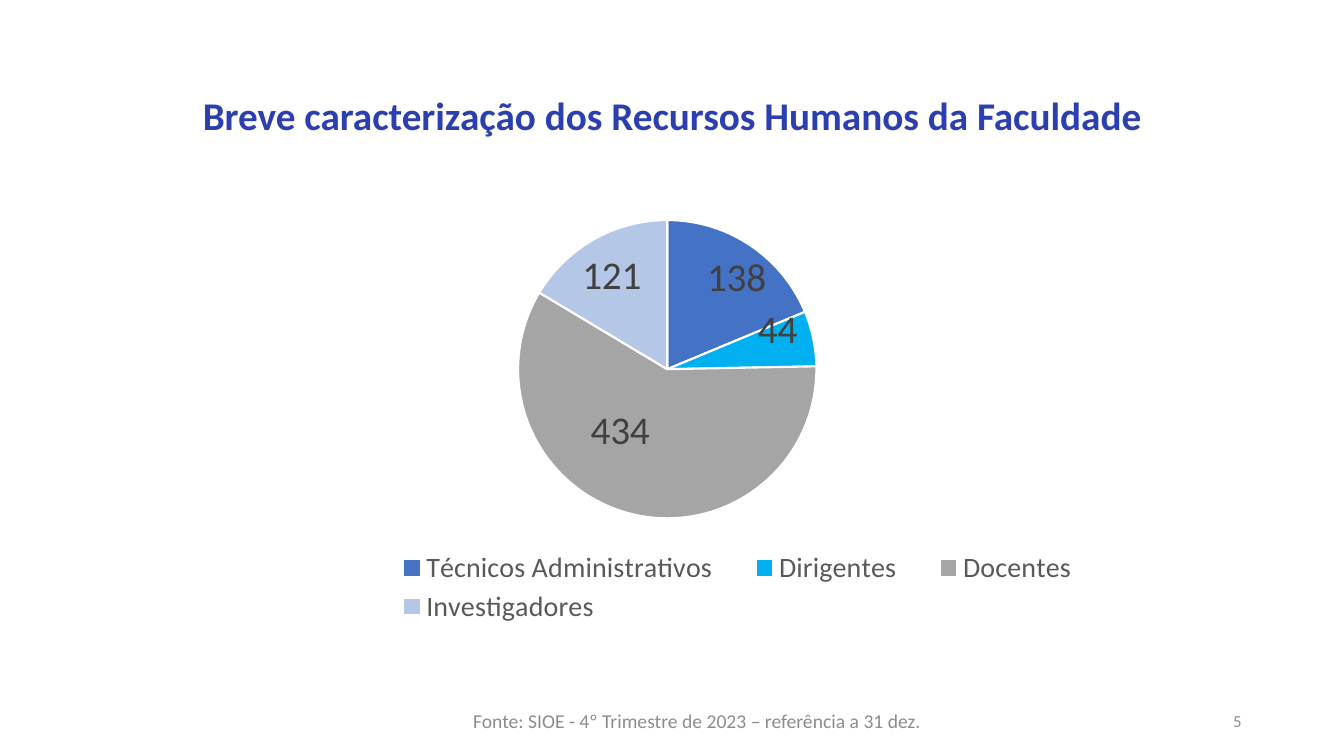
import pptx
import pptx.chart.data
import pptx.dml.color
import pptx.enum.chart
import pptx.enum.text
import pptx.oxml
import pptx.oxml.ns
import pptx.util
from dataclasses import dataclass

Pt = pptx.util.Pt
ALIGN = pptx.enum.text.PP_ALIGN
ANCHOR = pptx.enum.text.MSO_ANCHOR


@dataclass(frozen=True)
class Theme:
    font: str = "Calibri"
    title: str = "2C3FB1"
    foot: str = "8C8C8C"
    legend: str = "595959"
    label: str = "404040"
    edge: str = "FFFFFF"
    big: int = 28
    mid: int = 20
    note: int = 14
    small: int = 12


THEME = Theme()

# name, value, colour, shift of the label from the middle of its slice
STAFF = [
    ("Técnicos Administrativos", 138, "4472C4", (0.03, -0.06)),
    ("Dirigentes", 44, "00B0F0", (0.04, -0.05)),
    ("Docentes", 434, "A5A5A5", (-0.03, -0.02)),
    ("Investigadores", 121, "B4C7E7", (-0.02, -0.06)),
]


def style(font, size, color, bold=False):
    font.name = THEME.font
    font.size = Pt(size)
    font.bold = bold
    font.color.rgb = pptx.dml.color.RGBColor.from_string(color)


def paint(fill, color):
    fill.solid()
    fill.fore_color.rgb = pptx.dml.color.RGBColor.from_string(color)


def place(shape, box):
    shape.left, shape.top, shape.width, shape.height = map(Pt, box)


def write(shape, text, *, size, color, bold=False, align=ALIGN.CENTER,
          anchor=ANCHOR.MIDDLE, top=3.6, space=1.0):
    frame = shape.text_frame
    frame.word_wrap = True
    frame.auto_size = pptx.enum.text.MSO_AUTO_SIZE.NONE
    frame.vertical_anchor = anchor
    frame.margin_top = Pt(top)
    par = frame.paragraphs[0]
    par.alignment = align
    par.line_spacing = space
    run = par.add_run()
    run.text = text
    style(run.font, size, color, bold)


def layout(**parts):
    """Make a manual chart layout from fractions of the chart's size."""
    tags = "".join(f'<c:{tag} val="{val}"/>' for tag, val in parts.items())
    space = pptx.oxml.ns.nsdecls("c")
    return pptx.oxml.parse_xml(
        f"<c:layout {space}><c:manualLayout>{tags}</c:manualLayout></c:layout>")


def add_head(slide, box):
    head = slide.shapes.title
    place(head, box)
    write(head, "Breve caracterização dos Recursos Humanos da Faculdade",
          size=THEME.big, color=THEME.title, bold=True,
          anchor=ANCHOR.TOP, top=46, space=0.9)


def add_pie(slide, box):
    data = pptx.chart.data.CategoryChartData()
    data.categories = [name for name, *_ in STAFF]
    data.add_series("Series 1", [count for _, count, *_ in STAFF])
    chart = slide.shapes.add_chart(
        pptx.enum.chart.XL_CHART_TYPE.PIE, *map(Pt, box), data).chart
    chart.has_title = False
    style(chart.font, 10, "000000")

    plot = chart.plots[0]
    plot.vary_by_categories = True
    for index, (_, _, color, (x, y)) in enumerate(STAFF):
        point = plot.series[0].points[index]
        paint(point.format.fill, color)
        paint(point.format.line.fill, THEME.edge)
        point.format.line.width = Pt(1.5)
        label = point.data_label
        style(label.font, THEME.big, THEME.label)
        label.position = pptx.enum.chart.XL_LABEL_POSITION.CENTER
    for node, (*_, (x, y)) in zip(plot.series[0]._element.iter(
            pptx.oxml.ns.qn("c:dLbl")), STAFF):
        node.insert(1, layout(x=x, y=y))

    area = chart._chartSpace.chart.plotArea
    for old in area.findall(pptx.oxml.ns.qn("c:layout")):
        area.remove(old)
    area.insert(0, layout(layoutTarget="inner", xMode="edge", yMode="edge",
                          x=0.32, y=0.12, w=0.32, h=0.63))
    add_key(chart)


def add_key(chart):
    chart.has_legend = True
    key = chart.legend
    key.position = pptx.enum.chart.XL_LEGEND_POSITION.BOTTOM
    key.include_in_layout = False
    style(key.font, THEME.mid, THEME.legend)
    node = key._element
    for old in node.findall(pptx.oxml.ns.qn("c:layout")):
        node.remove(old)
    node.find(pptx.oxml.ns.qn("c:legendPos")).addnext(
        layout(xMode="edge", yMode="edge", x=0.16, y=0.81, w=0.79, h=0.17))


def add_foot(slide, box):
    """Put the source note and the page number side by side in the box."""
    left, top, width, height = box
    wide = width * 5 / 8
    note = slide.shapes.add_textbox(*map(Pt, (left, top, wide, height)))
    write(note, "Fonte: SIOE - 4º Trimestre de 2023 – referência a 31 dez.",
          size=THEME.note, color=THEME.foot)
    page = slide.shapes.add_textbox(
        *map(Pt, (left + wide, top, width - wide, height)))
    write(page, "5", size=THEME.small, color=THEME.foot, align=ALIGN.RIGHT)


def main():
    deck = pptx.Presentation()
    deck.slide_width, deck.slide_height = Pt(960), Pt(540)
    slide = deck.slides.add_slide(deck.slide_layouts[5])
    add_head(slide, (53, 23, 854, 143))
    add_foot(slide, (318, 500.5, 576, 29))
    add_pie(slide, (157, 116.5, 666, 338.5))
    deck.save("out.pptx")


if __name__ == "__main__":
    main()
